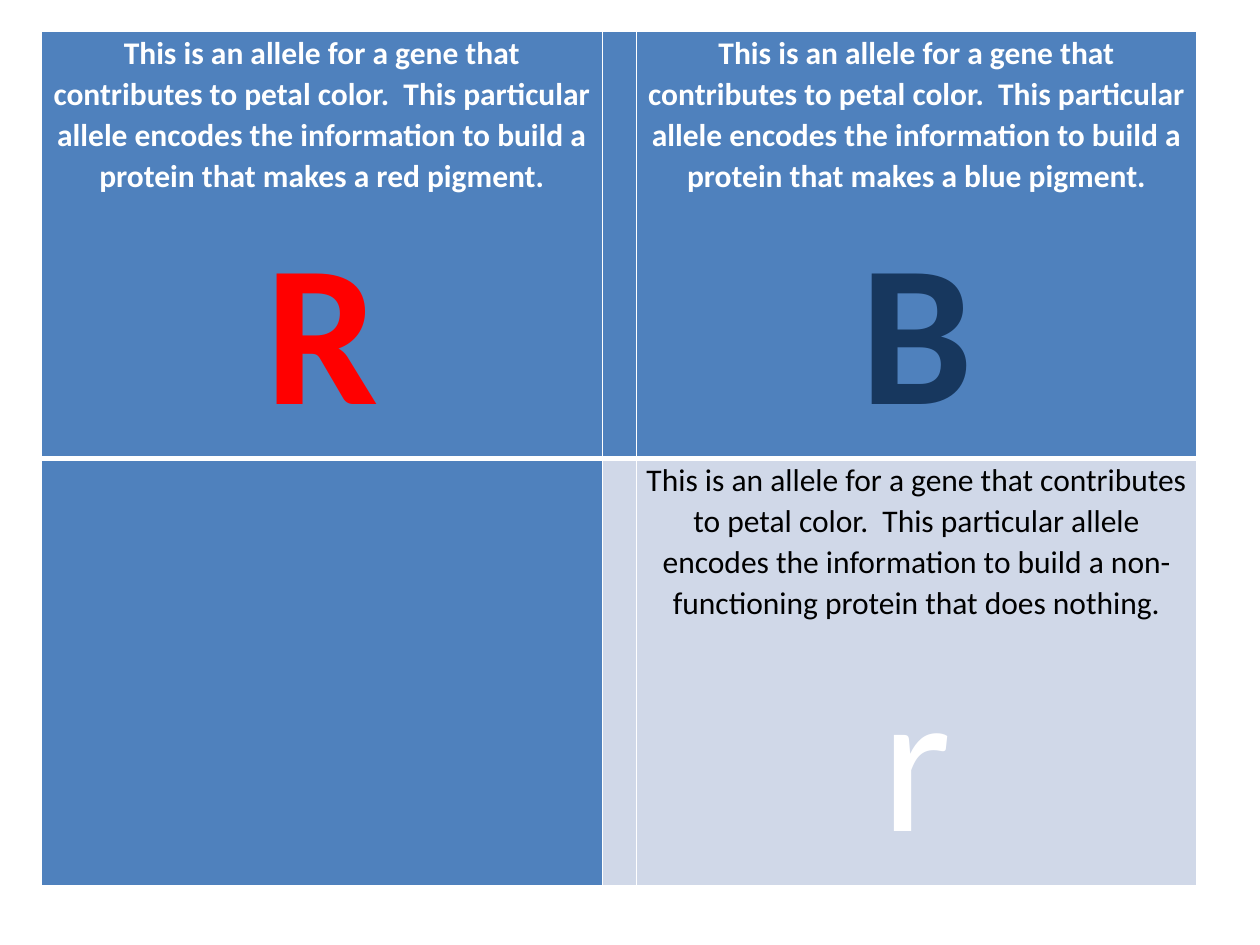
from lxml import etree
from pptx import Presentation
from pptx.dml.color import RGBColor
from pptx.enum.text import PP_ALIGN
from pptx.oxml.ns import qn
from pptx.util import Inches, Pt

CENTER = PP_ALIGN.CENTER
WHITE = RGBColor(0xFF, 0xFF, 0xFF)
BLACK = RGBColor(0x00, 0x00, 0x00)
RED = RGBColor(0xFF, 0x00, 0x00)
NAVY = RGBColor(0x17, 0x37, 0x5E)
BLUE = RGBColor(0x4F, 0x81, 0xBD)
PALE = RGBColor(0xD0, 0xD8, 0xE8)

INTRO = ("This is an allele for a gene that contributes to petal color.  "
         "This particular allele encodes the information to build a ")


def write_paragraph(para, text, *, size, color, bold):
    para.alignment = CENTER
    para.line_spacing = 1.07
    span = para.add_run()
    span.text = text
    span.font.name = "Calibri"
    span.font.size = Pt(size)
    span.font.bold = bold
    span.font.color.rgb = color


def add_border(cell, side, width):
    line = etree.SubElement(cell._tc.get_or_add_tcPr(), qn(f"a:ln{side}"), w=str(Pt(width)))
    fill = etree.SubElement(line, qn("a:solidFill"))
    etree.SubElement(fill, qn("a:srgbClr"), val=str(WHITE))


deck = Presentation()
deck.slide_width = Inches(10)
deck.slide_height = Inches(7.5)
page = deck.slides.add_slide(deck.slide_layouts[6])

# Two rows of allele cards with a narrow gutter column between them
column_widths = [4.45, 0.27, 4.45]
row_height = 3.39
cards = page.shapes.add_table(2, 3, Inches(0.33), Inches(0.25),
                              Inches(sum(column_widths)), Inches(2 * row_height)).table
cards.horz_banding = False
for column, width in zip(cards.columns, column_widths):
    column.width = Inches(width)
for row in cards.rows:
    row.height = Inches(row_height)

# Cell borders (heavier between the rows), margins and fills
fills = [[BLUE, BLUE, BLUE], [BLUE, PALE, PALE]]
for row_index, row_fills in enumerate(fills):
    top, bottom = [(1, 3), (3, 1)][row_index]
    for column_index, color in enumerate(row_fills):
        cell = cards.cell(row_index, column_index)
        for side, width in (("L", 1), ("R", 1), ("T", top), ("B", bottom)):
            add_border(cell, side, width)
        cell.fill.solid()
        cell.fill.fore_color.rgb = color
        cell.margin_left = cell.margin_right = Inches(0.07)
        cell.margin_top = cell.margin_bottom = 0

# Allele descriptions, each above its large letter
alleles = [
    (0, 0, "protein that makes a red pigment.", WHITE, "R", RED, True),
    (0, 2, "protein that makes a blue pigment.", WHITE, "B", NAVY, True),
    (1, 2, "non-functioning protein that does nothing.", BLACK, "r", WHITE, False),
]
for row_index, column_index, ending, text_color, letter, letter_color, bold in alleles:
    frame = cards.cell(row_index, column_index).text_frame
    write_paragraph(frame.paragraphs[0], INTRO + ending, size=18, color=text_color, bold=bold)
    write_paragraph(frame.add_paragraph(), letter, size=115, color=letter_color, bold=bold)

deck.save("out.pptx")
